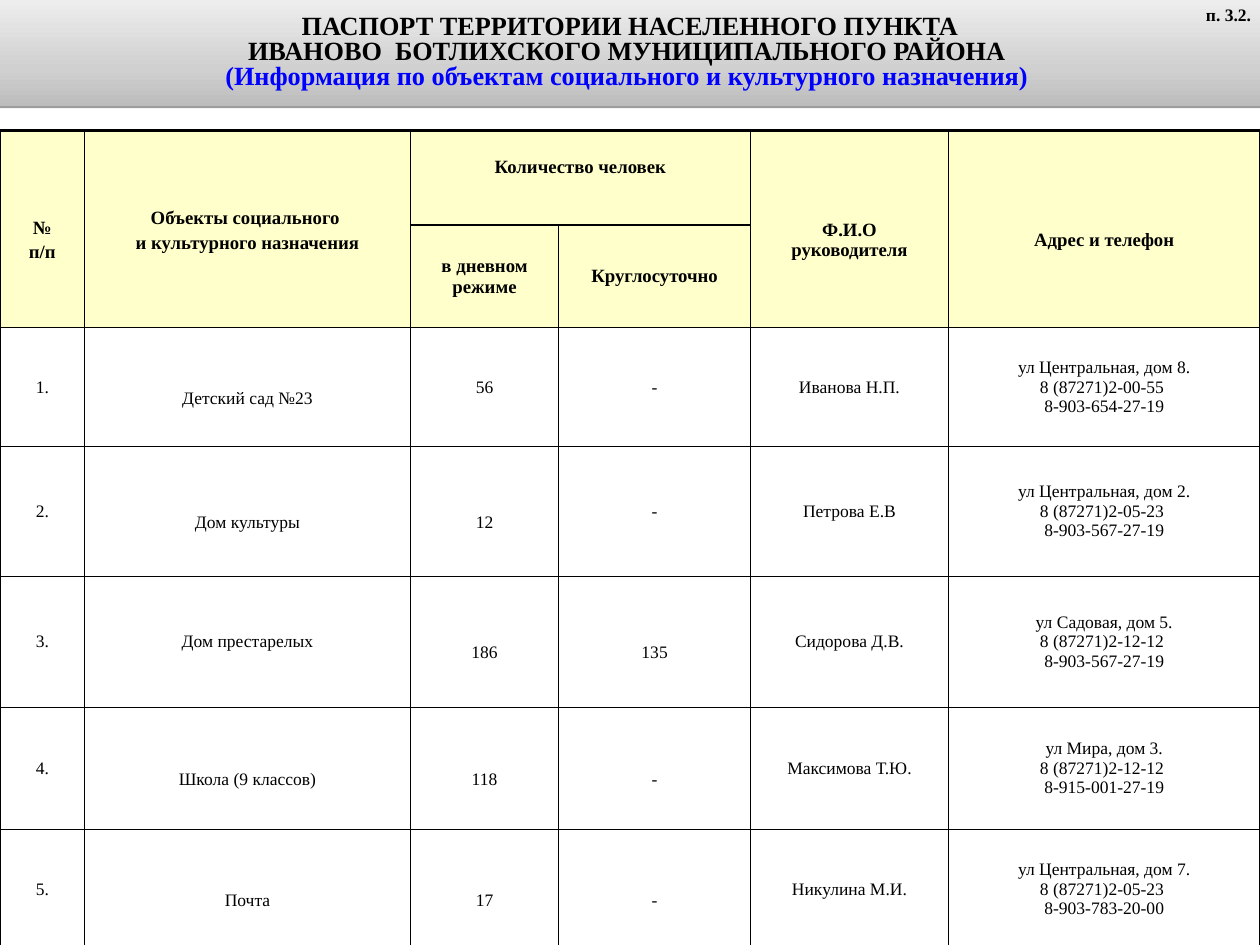
import dataclasses

import pptx
import pptx.dml.color
import pptx.enum.shapes
import pptx.enum.text
import pptx.oxml
import pptx.oxml.ns
import pptx.util
from lxml import etree

Cm = pptx.util.Cm
Pt = pptx.util.Pt
ALIGN = pptx.enum.text.PP_ALIGN
MIDDLE = pptx.enum.text.MSO_ANCHOR.MIDDLE


@dataclasses.dataclass(frozen=True)
class Theme:
    """Colours, type sizes and line widths of the slide."""
    font: str = "Times New Roman"
    ink: str = "000000"
    accent: str = "0000FF"
    heading_fill: str = "FFFFCC"
    body_fill: str = "FFFFFF"
    banner_stops: tuple = ((0, "BCBCBC"), (35, "D0D0D0"), (100, "EDEDED"))
    title_size: float = 21
    heading_size: float = 15
    body_size: float = 14
    inner_line: float = 1
    outer_line: float = 2.25


THEME = Theme()

TITLE = (
    ("ПАСПОРТ ТЕРРИТОРИИ НАСЕЛЕННОГО ПУНКТА", THEME.ink),
    ("ИВАНОВО  БОТЛИХСКОГО МУНИЦИПАЛЬНОГО РАЙОНА ", THEME.ink),
    ("(Информация по объектам социального и культурного назначения) ", THEME.accent),
)
COLUMN_WIDTHS = (2.39, 9.19, 4.19, 5.41, 5.59, 8.79)
ROW_HEIGHTS = (2.67, 2.9, 3.35, 3.66, 3.71, 3.43, 3.4)
TEXT_DROP = 0.62
HEADINGS = (
    (0, 0, 1, 0, ("№", "п/п"), TEXT_DROP),
    (0, 1, 1, 1, ("Объекты социального ", "и культурного назначения"), 0.1),
    (0, 2, 0, 3, ("Количество человек",), -TEXT_DROP),
    (0, 4, 1, 4, ("Ф.И.О руководителя",), TEXT_DROP),
    (0, 5, 1, 5, ("Адрес и телефон",), TEXT_DROP),
    (1, 2, 1, 2, ("в дневном режиме",), 0),
    (1, 3, 1, 3, ("Круглосуточно",), 0),
)
OBJECTS = (
    ("Детский сад №23", "56", "-", "Иванова Н.П.",
     ("ул Центральная, дом 8.", "8 (87271)2-00-55 ", "8-903-654-27-19"), (1,)),
    ("Дом культуры", "12", "-", "Петрова Е.В",
     ("ул Центральная, дом 2.", "8 (87271)2-05-23 ", "8-903-567-27-19"), (1, 2)),
    ("Дом престарелых", "186", "135", "Сидорова Д.В.",
     ("ул Садовая, дом 5.", "8 (87271)2-12-12 ", "8-903-567-27-19"), (2, 3)),
    ("Школа (9 классов)", "118", "-", "Максимова Т.Ю.",
     ("ул Мира, дом 3.", "8 (87271)2-12-12 ", "8-915-001-27-19"), (1, 2, 3)),
    ("Почта", "17", "-", "Никулина М.И.",
     ("ул Центральная, дом 7.", "8 (87271)2-05-23 ", "8-903-783-20-00"), (1, 2, 3)),
)


def rgb(color):
    """Turn a hexadecimal string into a colour."""
    return pptx.dml.color.RGBColor.from_string(color)


def add_paragraph(frame, index, text, size, color=THEME.ink, bold=False, align=ALIGN.CENTER):
    """Write one paragraph with a single run and return it."""
    paragraph = frame.add_paragraph() if index else frame.paragraphs[0]
    paragraph.alignment = align
    run = paragraph.add_run()
    run.text = text
    run.font.name = THEME.font
    run.font.size = Pt(size)
    run.font.bold = bold
    run.font.color.rgb = rgb(color)
    return paragraph


def add_banner(slide, left, top, width, height):
    """Draw the gradient banner with the three title lines."""
    banner = slide.shapes.add_shape(pptx.enum.shapes.MSO_SHAPE.RECTANGLE,
                                    Cm(left), Cm(top), Cm(width), Cm(height))
    banner.fill.gradient()
    banner.fill.gradient_angle = 90
    qn = pptx.oxml.ns.qn
    stops = banner.element.spPr.find(".//" + qn("a:gsLst"))
    for stop in list(stops):
        stops.remove(stop)
    for position, color in THEME.banner_stops:
        stop = etree.SubElement(stops, qn("a:gs"), pos=str(position * 1000))
        etree.SubElement(stop, qn("a:srgbClr"), val=color)
    banner.line.fill.background()
    banner.shadow.inherit = False
    effects = banner.element.spPr.find(qn("a:effectLst"))
    shadow = etree.SubElement(effects, qn("a:outerShdw"), blurRad="0", dist=str(Pt(1.6)),
                              dir="5400000", rotWithShape="0")
    shade = etree.SubElement(shadow, qn("a:srgbClr"), val=THEME.ink)
    etree.SubElement(shade, qn("a:alpha"), val="38000")
    frame = banner.text_frame
    frame.word_wrap = True
    frame.vertical_anchor = MIDDLE
    for index, (text, color) in enumerate(TITLE):
        paragraph = add_paragraph(frame, index, text, THEME.title_size, color, bold=True)
        paragraph.line_spacing = 0.8


def add_section_label(slide, left, top, width, height):
    """Place the section number in the corner."""
    label = slide.shapes.add_textbox(Cm(left), Cm(top), Cm(width), Cm(height))
    label.text_frame.word_wrap = True
    add_paragraph(label.text_frame, 0, "п. 3.2.", THEME.body_size, bold=True, align=ALIGN.RIGHT)


def style_cell(cell, row, column):
    """Give a cell its borders, fill, margins and anchor."""
    outer_sides = {"L": column == 0, "R": column == len(COLUMN_WIDTHS) - 1,
                   "T": row == 0, "B": row == len(ROW_HEIGHTS) - 1}
    qn = pptx.oxml.ns.qn
    properties = cell._tc.get_or_add_tcPr()
    for side, outer in outer_sides.items():
        width = THEME.outer_line if outer else THEME.inner_line
        border = etree.SubElement(properties, qn("a:ln" + side), w=str(Pt(width)))
        fill = etree.SubElement(border, qn("a:solidFill"))
        etree.SubElement(fill, qn("a:srgbClr"), val=THEME.ink)
    cell.fill.solid()
    cell.fill.fore_color.rgb = rgb(THEME.heading_fill if row < 2 else THEME.body_fill)
    cell.margin_left = cell.margin_right = Cm(0.36)
    cell.margin_top = cell.margin_bottom = Cm(0.18)
    cell.vertical_anchor = MIDDLE


def write_cell(cell, lines, size, bold=False, drop=0, gap=0):
    """Fill a cell with lines, moved down or up by an uneven margin."""
    cell.margin_top = Cm(0.18 + max(drop, 0))
    cell.margin_bottom = Cm(0.18 + max(-drop, 0))
    for index, line in enumerate(lines):
        paragraph = add_paragraph(cell.text_frame, index, line, size, bold=bold)
        paragraph.space_before = Pt(gap if index else 0)


def add_objects_table(slide, left, top):
    """Build the table of social and cultural objects."""
    table = slide.shapes.add_table(len(ROW_HEIGHTS), len(COLUMN_WIDTHS), Cm(left), Cm(top),
                                   Cm(sum(COLUMN_WIDTHS)), Cm(sum(ROW_HEIGHTS))).table
    table.first_row = table.horz_banding = False
    for column, width in zip(table.columns, COLUMN_WIDTHS):
        column.width = Cm(width)
    for row, height in zip(table.rows, ROW_HEIGHTS):
        row.height = Cm(height)
    for row in range(len(ROW_HEIGHTS)):
        for column in range(len(COLUMN_WIDTHS)):
            style_cell(table.cell(row, column), row, column)
    for row, column, last_row, last_column, lines, drop in HEADINGS:
        cell = table.cell(row, column)
        if (row, column) != (last_row, last_column):
            cell.merge(table.cell(last_row, last_column))
        write_cell(cell, lines, THEME.heading_size, True, drop, gap=3)
    for number, (name, day, night, head, address, lowered) in enumerate(OBJECTS, 1):
        contents = ((f"{number}.",), (name,), (day,), (night,), (head,), address)
        for column, lines in enumerate(contents):
            write_cell(table.cell(number + 1, column), lines, THEME.body_size,
                       drop=TEXT_DROP if column in lowered else 0)


def main():
    """Create the presentation and save it."""
    presentation = pptx.Presentation()
    presentation.slide_width = Cm(35.56)
    presentation.slide_height = Cm(26.67)
    slide = presentation.slides.add_slide(presentation.slide_layouts[6])
    add_objects_table(slide, 0, 3.68)
    add_banner(slide, 0, 0, 35.56, 3)
    add_section_label(slide, 33.55, 0, 2.01, 0.84)
    presentation.save("out.pptx")


if __name__ == "__main__":
    main()
